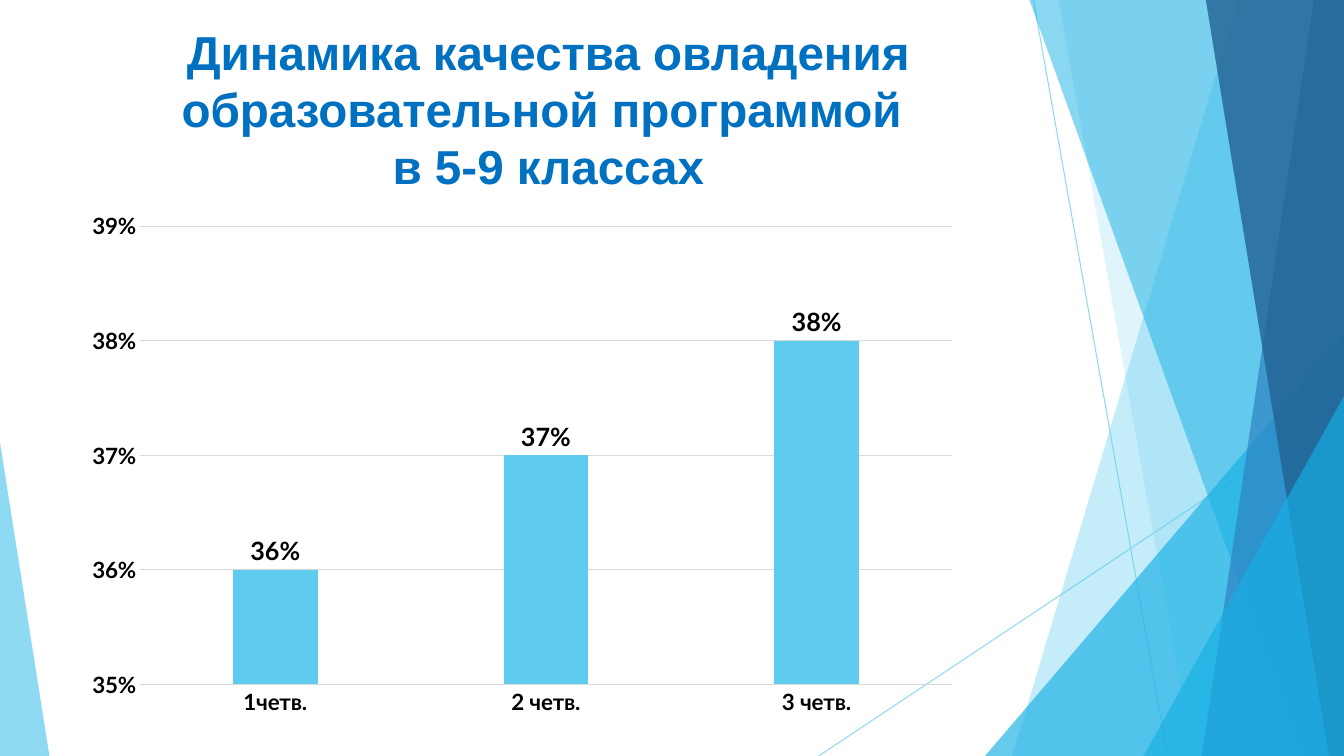
from dataclasses import dataclass

from lxml.etree import SubElement
from pptx import Presentation
from pptx.chart.chart import Chart
from pptx.chart.data import CategoryChartData
from pptx.dml.color import RGBColor
from pptx.dml.fill import FillFormat
from pptx.enum.chart import XL_CHART_TYPE, XL_LABEL_POSITION, XL_TICK_MARK
from pptx.enum.shapes import MSO_CONNECTOR, MSO_SHAPE
from pptx.enum.text import MSO_ANCHOR, MSO_AUTO_SIZE, PP_ALIGN
from pptx.oxml import parse_xml
from pptx.oxml.ns import nsdecls, qn
from pptx.slide import Slide
from pptx.text.text import Font
from pptx.util import Inches, Pt

COLOURS = {
    "sky": "5FCBEF",
    "cyan": "17B0E4",
    "blue": "2E83C3",
    "navy": "226292",
    "title": "0070C0",
    "text": "000000",
    "grid": "D9D9D9",
}
WIDTH, HEIGHT = 13.33, 7.5


@dataclass
class Ray:
    start: tuple[float, float]
    end: tuple[float, float]


@dataclass
class Band:
    """Strip from a slanted left edge to the right side of the slide."""
    top_left: float
    bottom_left: float
    colour: str
    opacity: int


@dataclass
class Corner:
    """Triangle standing on the bottom edge, its apex at one side."""
    left: float
    top: float
    width: float
    apex: float
    colour: str
    opacity: int


RAYS = [Ray((10.25, 0), (11.58, HEIGHT)), Ray((WIDTH, 4.03), (8.12, HEIGHT))]
FACETS = [
    Band(12.28, 10.04, "sky", 36),
    Band(10.5, 11.83, "sky", 20),
    Corner(9.77, 3.33, 3.56, 1, "cyan", 66),
    Band(10.21, 12.91, "cyan", 50),
    Band(13.03, 11.92, "blue", 70),
    Band(11.96, 13.18, "navy", 80),
    Corner(11.34, 3.93, 1.99, 1, "cyan", 66),
    Corner(0, 4.39, 0.49, 0, "sky", 70),
]


def rgb(name: str) -> RGBColor:
    return RGBColor.from_string(COLOURS[name])


def paint(fill: FillFormat, colour: str) -> None:
    fill.solid()
    fill.fore_color.rgb = rgb(colour)


def set_opacity(element, percent: int) -> None:
    """Make the first colour inside the element partly transparent."""
    colour = next(element.iter(qn("a:srgbClr")))
    SubElement(colour, qn("a:alpha")).set("val", str(percent * 1000))


def style_font(font: Font, name: str, size: float, colour: str) -> None:
    font.name = name
    font.size = Pt(size)
    font.bold = True
    font.color.rgb = rgb(colour)


def draw_ray(page: Slide, ray: Ray) -> None:
    points = [Inches(value) for value in (*ray.start, *ray.end)]
    line = page.shapes.add_connector(MSO_CONNECTOR.STRAIGHT, *points)
    line.line.color.rgb = rgb("sky")
    line.line.width = Pt(0.75)
    properties = line.element.spPr
    set_opacity(properties, 70)
    SubElement(properties, qn("a:effectLst"))


def draw_facet(page: Slide, facet: Band | Corner) -> None:
    if isinstance(facet, Band):
        builder = page.shapes.build_freeform(Inches(facet.top_left), 0)
        corners = [(WIDTH, 0), (WIDTH, HEIGHT), (facet.bottom_left, HEIGHT)]
        builder.add_line_segments([(Inches(x), Inches(y)) for x, y in corners])
        shape = builder.convert_to_shape()
    else:
        shape = page.shapes.add_shape(
            MSO_SHAPE.ISOSCELES_TRIANGLE, Inches(facet.left), Inches(facet.top),
            Inches(facet.width), Inches(HEIGHT - facet.top))
        shape.adjustments[0] = facet.apex
    shape.shadow.inherit = False
    shape.line.fill.background()
    paint(shape.fill, facet.colour)
    set_opacity(shape.element.spPr, facet.opacity)


def write_title(page: Slide) -> None:
    title = page.shapes.title
    title.left, title.top = Inches(0.74), Inches(0.18)
    title.width, title.height = Inches(9.4), Inches(2.3)
    frame = title.text_frame
    frame.text = ("Динамика качества овладения образовательной программой "
                  "\vв 5-9 классах")
    frame.word_wrap = True
    frame.auto_size = MSO_AUTO_SIZE.NONE
    frame.vertical_anchor = MSO_ANCHOR.TOP
    paragraph = frame.paragraphs[0]
    paragraph.alignment = PP_ALIGN.CENTER
    for span in paragraph.runs:
        style_font(span.font, "Arial", 34, "title")


def fix_plot_area(chart: Chart) -> None:
    """Place the inner plot area by fractions of the chart frame."""
    fractions = {"x": 0.073, "y": 0.045, "w": 0.907, "h": 0.878}
    modes = '<c:xMode val="edge"/><c:yMode val="edge"/>'
    sizes = "".join(f'<c:{key} val="{value}"/>' for key, value in fractions.items())
    layout = parse_xml(
        f'<c:layout {nsdecls("c")}><c:manualLayout><c:layoutTarget val="inner"/>'
        f"{modes}{sizes}</c:manualLayout></c:layout>")
    plot_area = chart.element.chart.plotArea
    for previous in plot_area.findall(qn("c:layout")):
        plot_area.remove(previous)
    plot_area.insert(0, layout)


def draw_chart(page: Slide) -> None:
    data = CategoryChartData(number_format="0%")
    data.categories = ["1четв.", "2 четв.", "3 четв."]
    data.add_series("Series 1", [0.36, 0.37, 0.38])
    chart = page.shapes.add_chart(
        XL_CHART_TYPE.COLUMN_CLUSTERED, Inches(0.74), Inches(2.01),
        Inches(8.88), Inches(5.18), data).chart
    chart.has_legend = False
    chart.has_title = False
    style_font(chart.font, "Lato", 16, "text")

    values, categories = chart.value_axis, chart.category_axis
    for axis in (values, categories):
        axis.major_tick_mark = XL_TICK_MARK.NONE
        axis.minor_tick_mark = XL_TICK_MARK.NONE
        style_font(axis.tick_labels.font, "Lato", 16, "text")
    values.minimum_scale, values.maximum_scale = 0.35, 0.39
    values.major_unit = 0.01
    values.tick_labels.number_format = "0%"
    values.tick_labels.number_format_is_linked = False
    values.format.line.fill.background()
    for line in (values.major_gridlines.format.line, categories.format.line):
        line.color.rgb = rgb("grid")
        line.width = Pt(0.75)

    plot = chart.plots[0]
    plot.gap_width, plot.overlap = 219, -27
    plot.vary_by_categories = False
    paint(plot.series[0].format.fill, "sky")
    labels = plot.series[0].data_labels
    labels.show_value = True
    labels.position = XL_LABEL_POSITION.OUTSIDE_END
    labels.number_format = "0%"
    labels.number_format_is_linked = False
    style_font(labels.font, "Lato", 18, "text")
    fix_plot_area(chart)


def main() -> None:
    deck = Presentation()
    deck.slide_width, deck.slide_height = Inches(WIDTH), Inches(HEIGHT)
    page = deck.slides.add_slide(deck.slide_layouts.get_by_name("Title Only"))
    for ray in RAYS:
        draw_ray(page, ray)
    for facet in FACETS:
        draw_facet(page, facet)
    write_title(page)
    draw_chart(page)
    deck.save("out.pptx")


if __name__ == "__main__":
    main()
